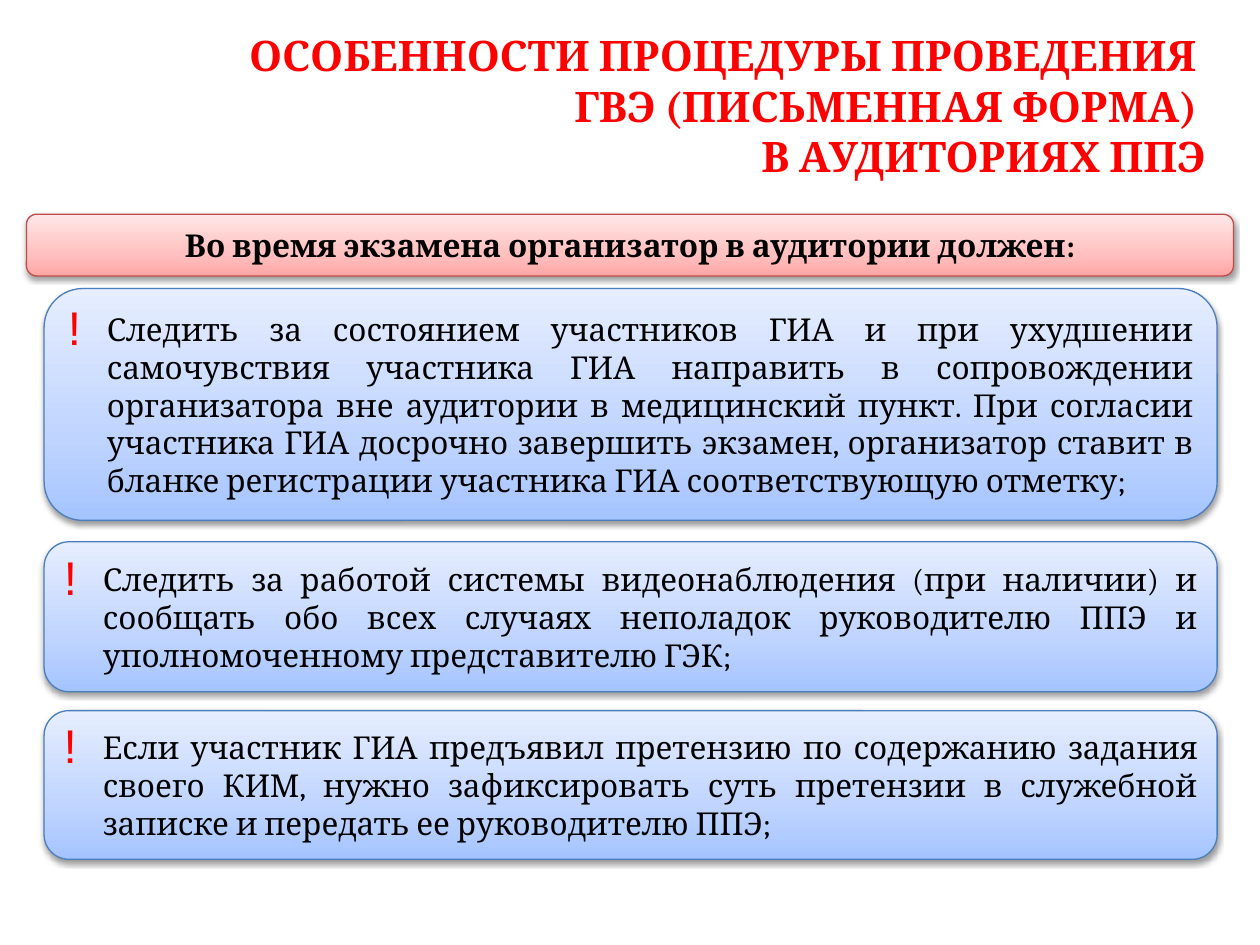
from copy import deepcopy
from dataclasses import dataclass

from pptx import Presentation
from pptx.dml.color import RGBColor
from pptx.enum.shapes import MSO_SHAPE
from pptx.enum.text import MSO_ANCHOR, PP_ALIGN
from pptx.oxml import parse_xml
from pptx.oxml.ns import nsdecls, qn
from pptx.util import Inches, Pt

FONT = "Cambria"
RED = RGBColor(0xFF, 0x00, 0x00)
BLACK = RGBColor(0x00, 0x00, 0x00)


@dataclass(frozen=True)
class Palette:
    bottom: RGBColor
    middle: RGBColor
    top: RGBColor
    line: RGBColor


@dataclass(frozen=True)
class Panel:
    left: float
    top: float
    width: float
    height: float
    text: str
    palette: Palette
    is_rule: bool = True


PINK = Palette(RGBColor(0xFF, 0xA6, 0xA5), RGBColor(0xFF, 0xC0, 0xBF),
               RGBColor(0xFF, 0xE7, 0xE7), RGBColor(0xBF, 0x4C, 0x48))
BLUE = Palette(RGBColor(0xA4, 0xC4, 0xFF), RGBColor(0xBF, 0xD4, 0xFF),
               RGBColor(0xE6, 0xEE, 0xFF), RGBColor(0x4B, 0x7E, 0xBC))

TITLE = "ОСОБЕННОСТИ ПРОЦЕДУРЫ ПРОВЕДЕНИЯ \vГВЭ (ПИСЬМЕННАЯ ФОРМА) \vВ АУДИТОРИЯХ ППЭ"
PANELS = [
    Panel(0.21, 1.7, 9.58, 0.49,
          "Во время экзамена организатор в аудитории должен:", PINK, False),
    Panel(0.35, 2.29, 9.31, 1.84,
          "Следить за состоянием участников ГИА и при ухудшении самочувствия "
          "участника ГИА направить в сопровождении организатора вне аудитории в "
          "медицинский пункт. При согласии участника ГИА досрочно завершить экзамен, "
          "организатор ставит в бланке регистрации участника ГИА соответствующую "
          "отметку;", BLUE),
    Panel(0.35, 4.3, 9.31, 1.19,
          "Следить за работой системы видеонаблюдения (при наличии) и сообщать обо "
          "всех случаях неполадок руководителю ППЭ и уполномоченному представителю "
          "ГЭК;", BLUE),
    Panel(0.35, 5.64, 9.31, 1.18,
          "Если участник ГИА предъявил претензию по содержанию задания своего КИМ, "
          "нужно зафиксировать суть претензии в служебной записке и передать ее "
          "руководителю ППЭ;", BLUE),
]


def write(s, text: str, size: int, color: RGBColor, bold: bool, align: PP_ALIGN):
    tf = s.text_frame
    tf.word_wrap = True
    tf.vertical_anchor = MSO_ANCHOR.MIDDLE
    tf.text = text
    p = tf.paragraphs[0]
    p.alignment = align
    for r in p.runs:
        r.font.name = FONT
        r.font.size = Pt(size)
        r.font.bold = bold
        r.font.color.rgb = color
    return p


def paint(s, palette: Palette) -> None:
    s.fill.gradient()
    s.fill.gradient_angle = 90
    stop_list = s._element.spPr.find(".//" + qn("a:gsLst"))
    stop_list.insert(1, deepcopy(stop_list[0]))
    colors = (palette.bottom, palette.middle, palette.top)
    for stop, color, position in zip(s.fill.gradient_stops, colors, (0, 0.35, 1)):
        stop.color.rgb = color
        stop.position = position
    s.line.color.rgb = palette.line
    s.line.width = Pt(0.75)
    s._element.spPr.append(parse_xml(
        f'<a:effectLst {nsdecls("a")}>'
        f'<a:outerShdw blurRad="{Pt(3.1)}" dist="{Pt(1.6)}" dir="5400000" rotWithShape="0">'
        '<a:srgbClr val="000000"><a:alpha val="38000"/></a:srgbClr>'
        '</a:outerShdw></a:effectLst>'))


def add_exclamation_bullet(p) -> None:
    pPr = p._p.get_or_add_pPr()
    pPr.set("marL", str(Inches(0.31)))
    pPr.set("indent", str(Inches(-0.31)))
    for tag in (f'<a:buClr {nsdecls("a")}><a:srgbClr val="{RED}"/></a:buClr>',
                f'<a:buSzPct {nsdecls("a")} val="150000"/>',
                f'<a:buFont {nsdecls("a")} typeface="Arial"/>',
                f'<a:buChar {nsdecls("a")} char="!"/>'):
        pPr.append(parse_xml(tag))


def add_panel(slide, panel: Panel) -> None:
    s = slide.shapes.add_shape(
        MSO_SHAPE.ROUNDED_RECTANGLE, Inches(panel.left), Inches(panel.top),
        Inches(panel.width), Inches(panel.height))
    paint(s, panel.palette)
    align = PP_ALIGN.JUSTIFY if panel.is_rule else PP_ALIGN.CENTER
    p = write(s, panel.text, 18, BLACK, not panel.is_rule, align)
    if panel.is_rule:
        add_exclamation_bullet(p)


def main() -> None:
    prs = Presentation()
    prs.slide_width, prs.slide_height = Inches(10), Inches(7.5)
    slide = prs.slides.add_slide(prs.slide_layouts[6])
    for panel in PANELS:
        add_panel(slide, panel)
    title = slide.shapes.add_textbox(Inches(0.67), Inches(0.21), Inches(9), Inches(1.25))
    write(title, TITLE, 24, RED, True, PP_ALIGN.RIGHT)
    prs.save("out.pptx")


if __name__ == "__main__":
    main()
